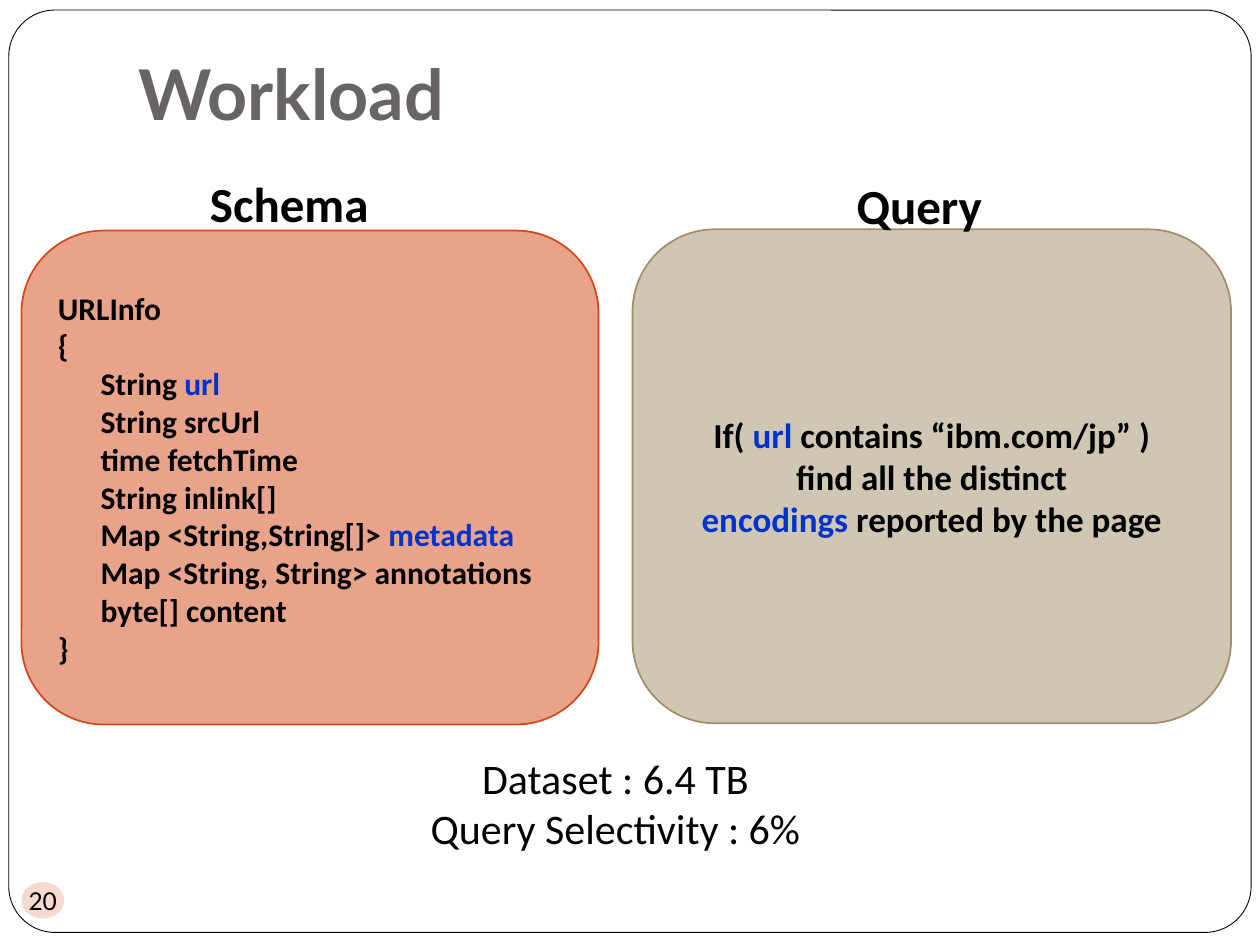
import pptx
import pptx.dml.color
import pptx.enum.shapes
import pptx.enum.text
import pptx.oxml.ns
import pptx.util
import lxml.etree

Inches = pptx.util.Inches
SHAPE = pptx.enum.shapes.MSO_SHAPE
ALIGN = pptx.enum.text.PP_ALIGN
ANCHOR = pptx.enum.text.MSO_ANCHOR

COLORS = {
    "white": "FFFFFF",
    "black": "000000",
    "title": "696464",
    "schema": "D34817",
    "query": "A28E6A",
    "field": "0033CC",
}


class SlideBuilder:
    """Holds the style and the slide being drawn."""

    body_font = "Calibri"
    title_font = "Lato"

    def __init__(self, slide):
        self.slide = slide

    def color(self, name):
        return pptx.dml.color.RGBColor.from_string(COLORS[name])

    def panel(self, kind, left, top, width, height, fill, line=None,
              line_width=1, opacity=100):
        """Draw a filled shape, optionally outlined or see-through."""
        shape = self.slide.shapes.add_shape(
            kind, Inches(left), Inches(top), Inches(width), Inches(height))
        shape.shadow.inherit = False
        shape.fill.solid()
        shape.fill.fore_color.rgb = self.color(fill)
        if opacity < 100:
            qn = pptx.oxml.ns.qn
            fill_color = shape._element.spPr.find(qn("a:solidFill"))[0]
            alpha = lxml.etree.SubElement(fill_color, qn("a:alpha"))
            alpha.set("val", str(opacity * 1000))
        if line:
            shape.line.color.rgb = self.color(line)
            shape.line.width = pptx.util.Pt(line_width)
        else:
            shape.line.fill.background()
        return shape

    def text_box(self, left, top, width, height):
        return self.slide.shapes.add_textbox(
            Inches(left), Inches(top), Inches(width), Inches(height))

    def add_lines(self, shape, lines, size, bold=False, color="black",
                  font=None, align=ALIGN.CENTER, anchor=ANCHOR.TOP, wrap=True):
        """Fill a shape with lines; each line is a list of text runs.

        A run given as a (text, color) pair has its own color.
        """
        text_frame = shape.text_frame
        text_frame.word_wrap = wrap
        text_frame.vertical_anchor = anchor
        for index, line in enumerate(lines):
            paragraph = (text_frame.add_paragraph() if index
                         else text_frame.paragraphs[0])
            paragraph.alignment = align
            for part in line:
                text, run_color = (part, color) if isinstance(part, str) else part
                run = paragraph.add_run()
                run.text = text
                run.font.name = font or self.body_font
                run.font.size = pptx.util.Pt(size)
                run.font.bold = bold
                run.font.color.rgb = self.color(run_color)
        return text_frame


def main():
    presentation = pptx.Presentation()
    presentation.slide_width = Inches(10)
    presentation.slide_height = Inches(7.5)
    builder = SlideBuilder(
        presentation.slides.add_slide(presentation.slide_layouts[6]))

    # Slide frame
    frame = builder.panel(SHAPE.ROUNDED_RECTANGLE, 0.07, 0.08, 9.86, 7.32,
                          "white", "black", line_width=0.5)
    frame.adjustments[0] = 0.05

    # Title
    title = builder.text_box(1, 0.3, 8.5, 0.87)
    title_frame = builder.add_lines(
        title, [["Workload"]], 40, bold=True, color="title",
        font=builder.title_font, align=ALIGN.LEFT, anchor=ANCHOR.BOTTOM)
    title_frame.margin_bottom = Inches(0.1)

    # Schema panel
    schema_lines = [
        ["URLInfo"],
        ["{"],
        ["      String ", ("url", "field")],
        ["      String srcUrl"],
        ["      time fetchTime"],
        ["      String inlink[]"],
        ["      Map <String,String[]> ", ("metadata", "field")],
        ["      Map <String, String> annotations"],
        ["      byte[] content"],
        ["}"],
    ]
    schema = builder.panel(SHAPE.ROUNDED_RECTANGLE, 0.17, 1.83, 4.58, 3.92,
                           "schema", "schema", opacity=50)
    builder.add_lines(schema, schema_lines, 18, bold=True, align=ALIGN.LEFT,
                      anchor=ANCHOR.MIDDLE)

    # Query panel
    query_lines = [
        ["If( ", ("url ", "field"), "contains “ibm.com/jp” )"],
        ["find all the distinct"],
        [("encodings ", "field"), "reported by the page"],
    ]
    query = builder.panel(SHAPE.ROUNDED_RECTANGLE, 5.02, 1.82, 4.75, 3.92,
                          "query", "query", opacity=50)
    builder.add_lines(query, query_lines, 20, bold=True, anchor=ANCHOR.MIDDLE)

    # Panel headings
    for heading, left, top, width in [("Schema", 1.17, 1.33, 2.25),
                                      ("Query", 5.67, 1.34, 3.25)]:
        builder.add_lines(builder.text_box(left, top, width, 0.57),
                          [[heading]], 28, bold=True)

    # Dataset facts
    builder.add_lines(builder.text_box(2.48, 5.92, 4.81, 0.91),
                      [["Dataset : 6.4 TB"], ["Query Selectivity : 6%"]], 24)

    # Page number
    badge = builder.panel(SHAPE.OVAL, 0.17, 7, 0.34, 0.29, "schema",
                          opacity=20)
    badge_frame = builder.add_lines(
        badge, [["20"]], 14, font=builder.title_font,
        anchor=ANCHOR.MIDDLE, wrap=False)
    badge_frame.margin_left = badge_frame.margin_right = 0
    badge_frame.margin_top = badge_frame.margin_bottom = 0

    presentation.save("out.pptx")


if __name__ == "__main__":
    main()
